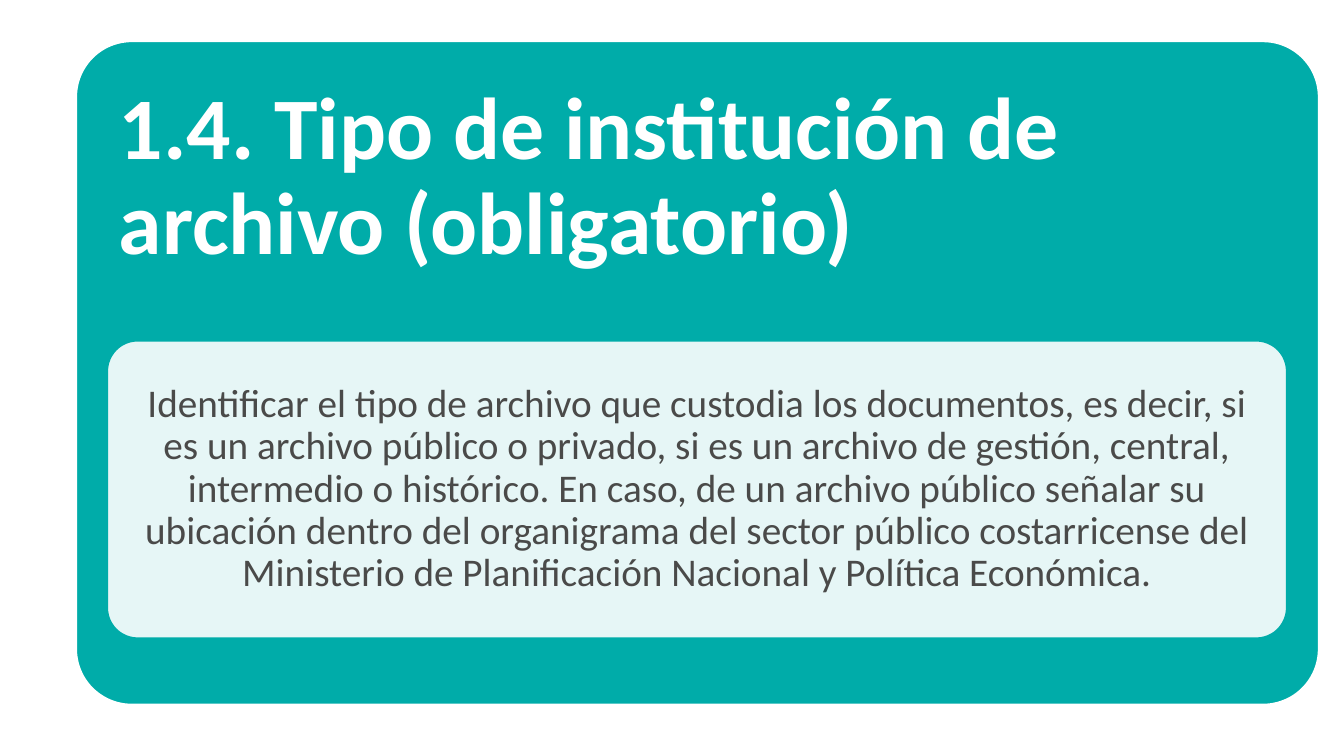
from dataclasses import dataclass

from lxml import etree
from pptx import Presentation
from pptx.dml.color import RGBColor
from pptx.enum.shapes import MSO_SHAPE
from pptx.enum.text import MSO_ANCHOR, PP_ALIGN
from pptx.oxml.ns import qn
from pptx.util import Pt

ROUNDED = MSO_SHAPE.ROUNDED_RECTANGLE
TOP, MIDDLE = MSO_ANCHOR.TOP, MSO_ANCHOR.MIDDLE
LEFT, CENTER = PP_ALIGN.LEFT, PP_ALIGN.CENTER


@dataclass(frozen=True)
class Theme:
    teal: RGBColor = RGBColor(0x00, 0xAC, 0xA9)
    white: RGBColor = RGBColor(0xFF, 0xFF, 0xFF)
    gray: RGBColor = RGBColor(0x4A, 0x4A, 0x49)
    font: str = "Calibri"
    heading_size: int = 47
    body_size: int = 21


theme = Theme()
prs = Presentation()
prs.slide_width, prs.slide_height = Pt(720), Pt(405)
slide = prs.slides.add_slide(prs.slide_layouts[6])


def add_panel(box, corner, fill, line):
    panel = slide.shapes.add_shape(ROUNDED, *[Pt(v) for v in box])
    panel.adjustments[0] = corner
    panel.shadow.inherit = False
    panel.fill.solid()
    panel.fill.fore_color.rgb = fill
    panel.line.color.rgb = line
    panel.line.width = Pt(2)
    return panel


def add_text(panel_box, inset, margin, text, size, color, bold, align, anchor):
    """Place text inside a panel, clear of its rounded corners."""
    x, y, width, height = panel_box
    box = (x + inset, y + inset, width - 2 * inset, height - 2 * inset)
    frame = slide.shapes.add_textbox(*[Pt(v) for v in box]).text_frame
    frame.word_wrap = True
    frame.vertical_anchor = anchor
    frame.margin_left = frame.margin_right = Pt(margin)
    frame.margin_top = frame.margin_bottom = Pt(margin)
    frame.text = text
    paragraph = frame.paragraphs[0]
    paragraph.alignment = align
    paragraph.line_spacing = 0.9
    font = paragraph.runs[0].font
    font.name, font.size, font.bold = theme.font, Pt(size), bold
    font.color.rgb = color


# Heading card
card_box = (40.3, 21.6, 666.7, 356.4)
add_panel(card_box, 0.085, theme.teal, theme.white)
add_text(card_box, 9, 14.4,
         "1.4. Tipo de institución de archivo (obligatorio)",
         theme.heading_size, theme.white, True, LEFT, TOP)

# Description panel, 90% opaque so the card tints it
description_box = (56.9, 182, 633, 160.5)
description = add_panel(description_box, 0.105, theme.white, theme.teal)
tint = description.fill._xPr.find(qn("a:solidFill"))[0]
etree.SubElement(tint, qn("a:alpha")).set("val", "90000")
add_text(description_box, 5, 6.5,
         "Identificar el tipo de archivo que custodia los documentos, es decir, "
         "si es un archivo público o privado, si es un archivo de gestión, "
         "central, intermedio o histórico. En caso, de un archivo público "
         "señalar su ubicación dentro del organigrama del sector público "
         "costarricense del Ministerio de Planificación Nacional y Política "
         "Económica.",
         theme.body_size, theme.gray, False, CENTER, MIDDLE)

prs.save("out.pptx")
